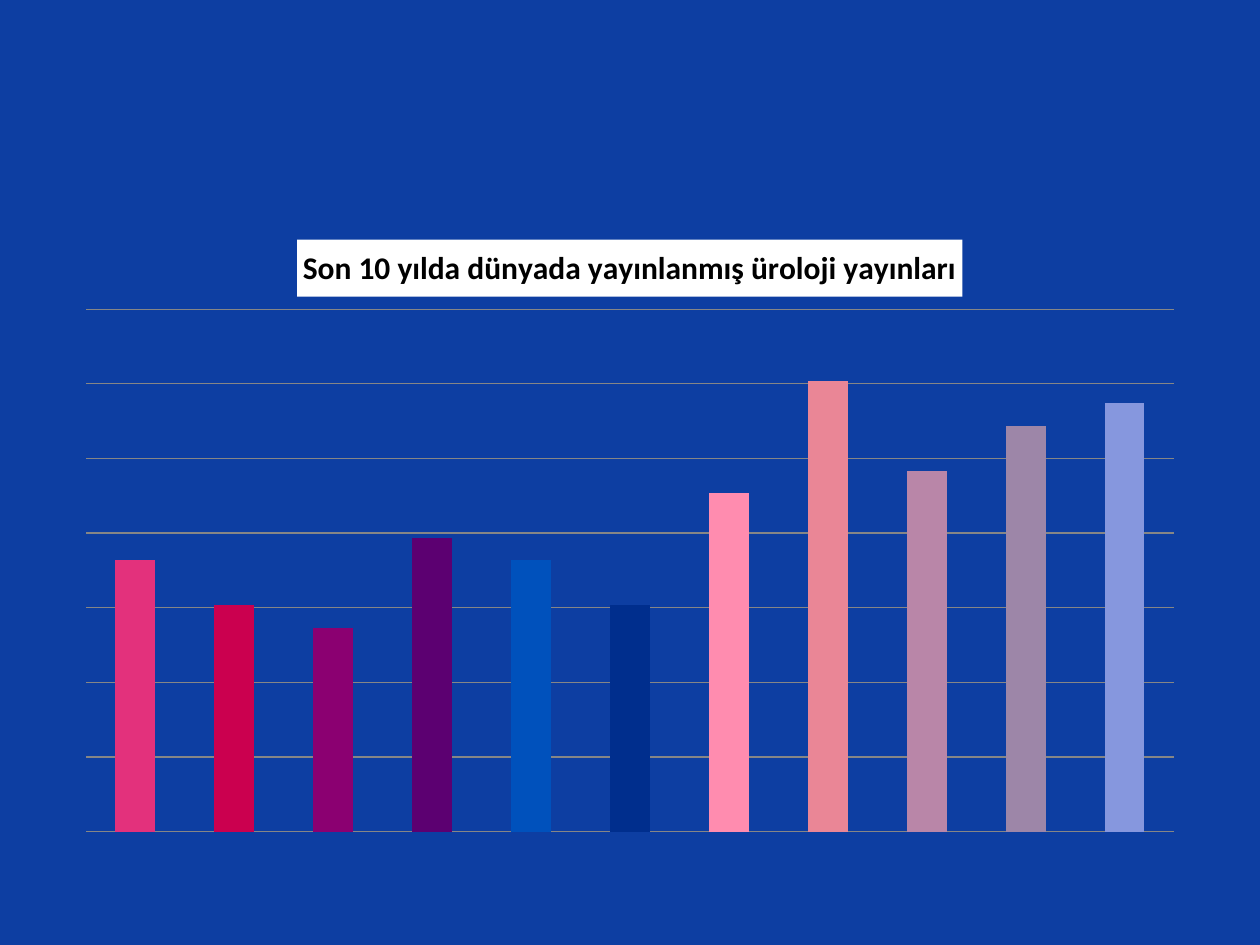
from dataclasses import dataclass

from lxml.etree import SubElement
from pptx import Presentation
from pptx.chart.data import CategoryChartData
from pptx.dml.color import RGBColor
from pptx.enum.chart import XL_CHART_TYPE as ChartType
from pptx.oxml import parse_xml
from pptx.oxml.ns import nsdecls, qn
from pptx.util import Pt


@dataclass(frozen=True)
class Theme:
    font: str = "Calibri"
    title_size: int = 18
    body_size: int = 10
    text: str = "000000"
    paper: str = "FFFFFF"
    backdrop: str = "00349E"
    grid: str = "868686"
    accents: tuple = ("FF388C", "E40059", "9C007F", "68007F", "005BD3", "00349E")


THEME = Theme()
TITLE = "Son 10 yılda dünyada yayınlanmış üroloji yayınları"
# Publications per year, as a percentage of the best year
VALUES = (92, 90, 89, 93, 92, 90, 95, 100, 96, 98, 99)
AXIS_START, AXIS_STEP, AXIS_STEPS = 79.9, 3.33, 7


def paint(fill, color, effect=None, percent=100):
    """Fill solidly, optionally with a shade, tint or alpha effect."""
    fill.solid()
    fill.fore_color.rgb = RGBColor.from_string(color)
    if effect:
        node = next(fill._xPr.iter(qn("a:srgbClr")))
        SubElement(node, qn(f"a:{effect}"), val=str(percent * 1000))


def style_font(font, size, bold):
    font.name = THEME.font
    font.size = Pt(size)
    font.bold = bold
    font.color.rgb = RGBColor.from_string(THEME.text)


def place(parent, after, width, height, **parts):
    """Lay out a chart part, given in points within a chart of this size."""
    for layout in parent.findall(qn("c:layout")):
        parent.remove(layout)
    target = '<c:layoutTarget val="inner"/>' if "w" in parts else ""
    modes = '<c:xMode val="edge"/><c:yMode val="edge"/>'
    whole = {"x": width, "y": height, "w": width, "h": height}
    sizes = "".join(f'<c:{name} val="{value / whole[name]}"/>'
                    for name, value in parts.items())
    layout = parse_xml(f'<c:layout {nsdecls("c")}><c:manualLayout>'
                       f"{target}{modes}{sizes}</c:manualLayout></c:layout>")
    parent.insert(0 if after is None else parent.index(after) + 1, layout)


def add_title(chart, width, height):
    chart.has_title = True
    title = chart.chart_title
    title.text_frame.text = TITLE
    style_font(title.text_frame.paragraphs[0].runs[0].font, THEME.title_size, True)
    paint(title.format.fill, THEME.paper)
    node = title._element
    place(node, node.find(qn("c:tx")), width, height, x=133.8, y=10.9)
    node.find(qn("c:overlay")).set("val", "1")


def style_axes(chart):
    chart.category_axis.visible = False
    axis = chart.value_axis
    axis.visible = False
    axis.minimum_scale = AXIS_START
    axis.maximum_scale = round(AXIS_START + AXIS_STEP * AXIS_STEPS, 2)
    axis.major_unit = AXIS_STEP
    axis.has_major_gridlines = True
    line = axis.major_gridlines.format.line
    line.width = Pt(0.75)
    line.color.rgb = RGBColor.from_string(THEME.grid)


def style_columns(plot):
    """Accents in turn: shaded in the first round, tinted in the next."""
    plot.gap_width = 150
    plot.overlap = 100
    plot.vary_by_categories = True
    count = len(THEME.accents)
    for index in range(len(VALUES)):
        effect = "shade" if index < count else "tint"
        point = plot.series[0].points[index]
        paint(point.format.fill, THEME.accents[index % count], effect, 77)


def add_publication_chart(page, left, top, width, height):
    data = CategoryChartData()
    data.categories = [str(number + 1) for number in range(len(VALUES))]
    data.add_series("Series 1", VALUES)
    chart = page.shapes.add_chart(ChartType.COLUMN_STACKED, Pt(left), Pt(top),
                                  Pt(width), Pt(height), data).chart
    chart.has_legend = False
    style_font(chart.font, THEME.body_size, False)
    add_title(chart, width, height)
    style_axes(chart)
    style_columns(chart.plots[0])
    place(chart._chartSpace.chart.plotArea, None, width, height,
          x=13, y=50.7, w=622, h=298.6)


def main():
    deck = Presentation()
    deck.slide_width, deck.slide_height = Pt(720), Pt(540)
    page = deck.slides.add_slide(deck.slide_layouts[6])
    paint(page.background.fill, THEME.backdrop, "alpha", 95)
    add_publication_chart(page, 36, 126, 648, 356.4)
    deck.save("out.pptx")


if __name__ == "__main__":
    main()
